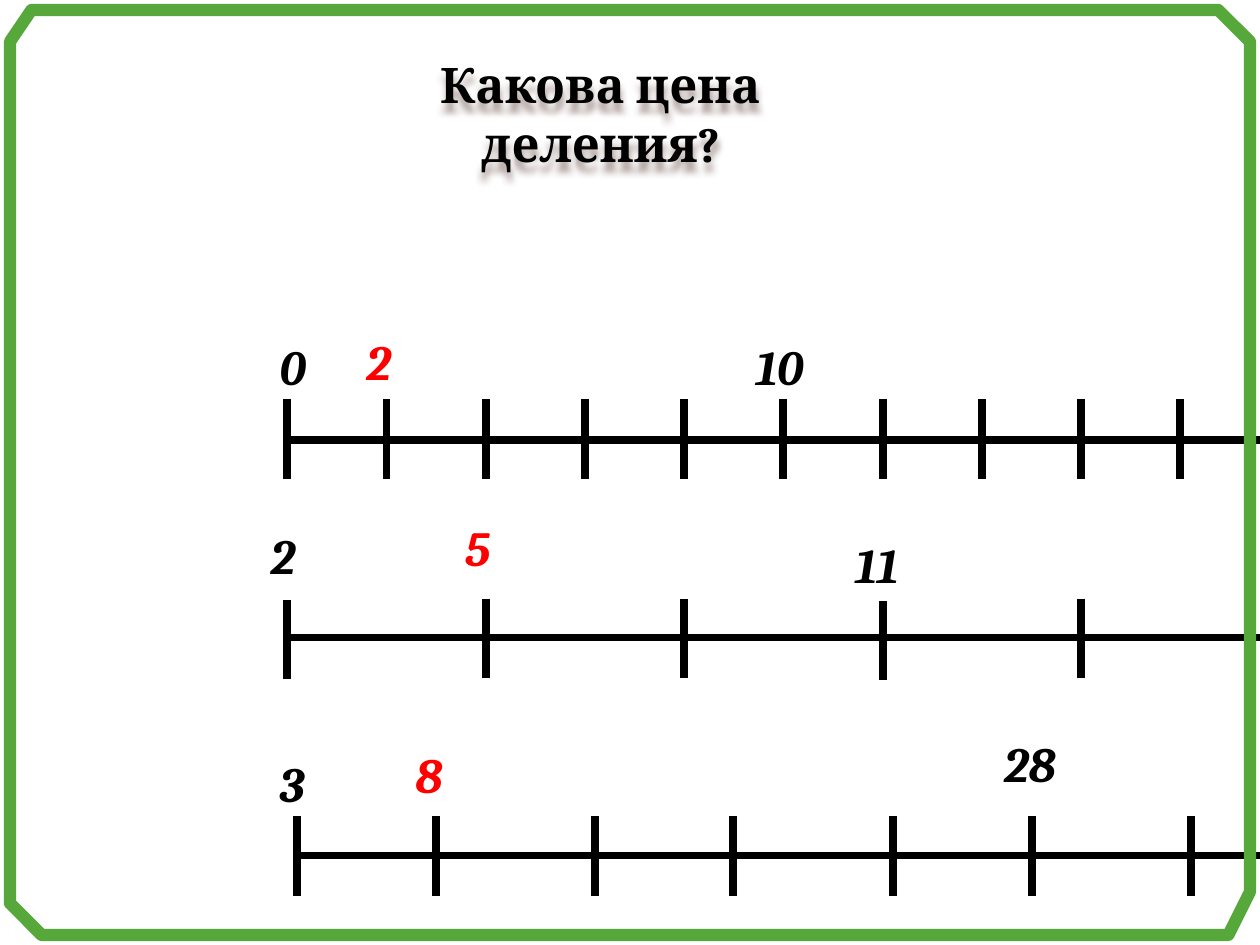
from dataclasses import dataclass

from lxml import etree
from pptx import Presentation
from pptx.dml.color import RGBColor
from pptx.enum.shapes import MSO_CONNECTOR, MSO_SHAPE
from pptx.enum.text import MSO_ANCHOR, MSO_AUTO_SIZE, PP_ALIGN
from pptx.oxml import parse_xml
from pptx.oxml.ns import nsdecls, qn
from pptx.util import Inches, Pt

STRAIGHT = MSO_CONNECTOR.STRAIGHT
CLOUD = MSO_SHAPE.CLOUD_CALLOUT
TOP = MSO_ANCHOR.TOP
GROW = MSO_AUTO_SIZE.SHAPE_TO_FIT_TEXT
CENTER = PP_ALIGN.CENTER


@dataclass(frozen=True)
class Theme:
    font: str = "Cambria"
    size: int = 28
    ink: str = "000000"
    answer: str = "FF0000"
    frame: str = "55A839"
    shadow: str = "4A2A20"
    scale_width: float = 4.5
    frame_width: float = 7


THEME = Theme()
TITLE = "Какова цена деления?"
TITLE_AREA = (1.7, 0.18, 6.6, 1.34)
TITLE_TAIL = (-0.673, 0.744)
AXIS_LENGTH = 7.88
TICK_HEIGHT = 0.63
DIVISION = 0.7875
LABEL_HEIGHT = 0.57

SCALES = [
    {
        "axis": (2.28, 3.49),
        "ticks": [(2.28 + DIVISION * step, 3.17) for step in range(10)],
        "labels": [("0", 2.12, 2.62, 0.71), ("10", 5.9, 2.62, 0.79)],
    },
    {
        "axis": (2.28, 5.06),
        "ticks": [(2.28 + 2 * DIVISION * step, top)
                  for step, top in enumerate((4.76, 4.75, 4.75, 4.77, 4.75))],
        "labels": [("2", 2.05, 4.12, 0.71), ("11", 6.69, 4.19, 0.71)],
    },
    {
        "axis": (2.36, 6.79),
        "ticks": [(x, 6.48) for x in (2.36, 3.46, 4.72, 5.82, 7.09, 8.19, 9.45)],
        "labels": [("3", 2.12, 5.93, 0.71), ("28", 7.87, 5.77, 0.71)],
    },
]
ANSWERS = [("2", 2.81, 2.58, 0.71), ("5", 3.59, 4.06, 0.71), ("8", 3.2, 5.86, 0.71)]
FRAME = [(0.08, 0.33), (0.08, 7.17), (0.33, 7.42), (9.75, 7.42),
         (9.92, 7.08), (9.92, 0.33), (9.67, 0.08), (0.25, 0.08)]


def add_span(para, text, color, italic):
    span = para.add_run()
    span.text = text
    span.font.name = THEME.font
    span.font.size = Pt(THEME.size)
    span.font.bold = True
    span.font.italic = italic
    span.font.color.rgb = RGBColor.from_string(color)


def add_line(page, start, end):
    line = page.shapes.add_connector(STRAIGHT, *map(Inches, start + end))
    line.line.color.rgb = RGBColor.from_string(THEME.ink)
    line.line.width = Pt(THEME.scale_width)
    etree.SubElement(line._element.spPr, qn("a:effectLst"))


def add_label(page, label, color):
    text, left, top, width = label
    box = page.shapes.add_textbox(*map(Inches, (left, top, width, LABEL_HEIGHT)))
    box.text_frame.word_wrap = True
    box.text_frame.auto_size = GROW
    add_span(box.text_frame.paragraphs[0], text, color, True)


def add_scale(page, scale):
    left, middle = scale["axis"]
    add_line(page, (left, middle), (left + AXIS_LENGTH, middle))
    for x, top in scale["ticks"]:
        add_line(page, (x, top), (x, top + TICK_HEIGHT))
    for label in scale["labels"]:
        add_label(page, label, THEME.ink)


def add_title(page):
    cloud = page.shapes.add_shape(CLOUD, *map(Inches, TITLE_AREA))
    for index, value in enumerate(TITLE_TAIL):
        cloud.adjustments[index] = value
    cloud.fill.background()
    cloud.line.fill.background()
    cloud.text_frame.word_wrap = True
    cloud.text_frame.vertical_anchor = TOP
    para = cloud.text_frame.paragraphs[0]
    para.alignment = CENTER
    add_span(para, TITLE, THEME.ink, False)
    cloud._element.spPr.append(parse_xml(
        f'<a:effectLst {nsdecls("a")}>'
        '<a:outerShdw blurRad="50800" dist="63500" dir="5400000" rotWithShape="0">'
        f'<a:srgbClr val="{THEME.shadow}"><a:alpha val="45000"/></a:srgbClr>'
        '</a:outerShdw></a:effectLst>'))


def add_frame(page):
    corners = [(Inches(x), Inches(y)) for x, y in FRAME]
    builder = page.shapes.build_freeform(*corners[0])
    builder.add_line_segments(corners[1:], close=True)
    frame = builder.convert_to_shape()
    frame.shadow.inherit = False
    frame.fill.background()
    frame.line.color.rgb = RGBColor.from_string(THEME.frame)
    frame.line.width = Pt(THEME.frame_width)


def main():
    """Build the slide with three number scales and save it."""
    deck = Presentation()
    deck.slide_width, deck.slide_height = Inches(10), Inches(7.5)
    page = deck.slides.add_slide(deck.slide_layouts[6])
    for scale in SCALES:
        add_scale(page, scale)
    add_title(page)
    add_frame(page)
    for answer in ANSWERS:
        add_label(page, answer, THEME.answer)
    deck.save("out.pptx")


if __name__ == "__main__":
    main()
